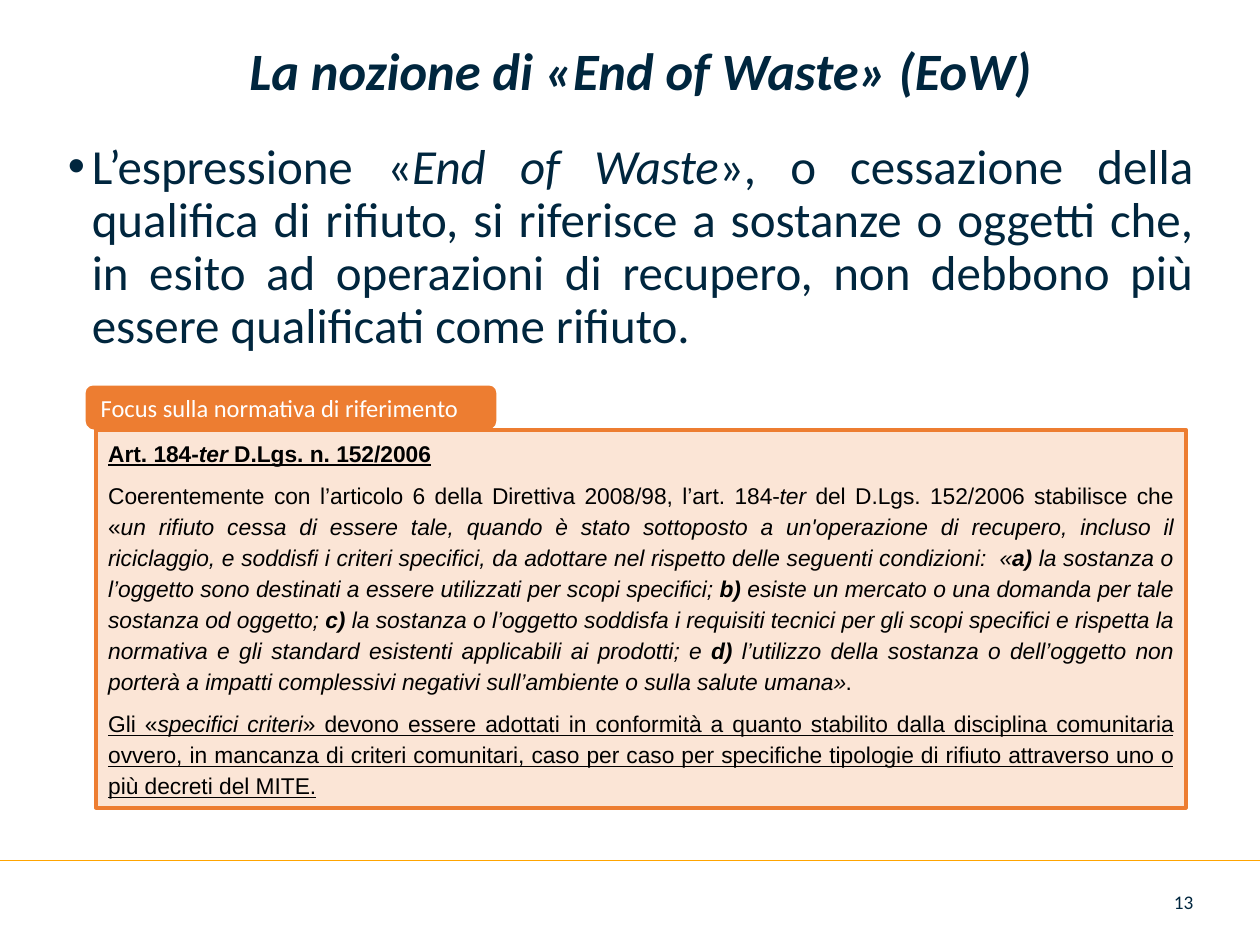
from lxml.etree import SubElement
from pptx import Presentation
from pptx.dml.color import RGBColor
from pptx.enum.shapes import MSO_CONNECTOR, MSO_SHAPE
from pptx.enum.text import MSO_ANCHOR, PP_ALIGN
from pptx.oxml.ns import qn
from pptx.util import Inches, Pt

NAVY, ORANGE, PEACH, AMBER = "00263E", "ED7D31", "FBE5D6", "FFA400"
WHITE, BLACK = "FFFFFF", "000000"

TITLE = "La nozione di «End of Waste» (EoW)"

# Each span is (text, styles): b = bold, i = italic, u = underlined
DEFINITION = [
    ("L’espressione «", ""),
    ("End of Waste", "i"),
    ("», o cessazione della qualifica di rifiuto, si riferisce a sostanze o oggetti che, "
     "in esito ad operazioni di recupero, non debbono più essere qualificati come rifiuto.", ""),
]
LAW_TEXT = [
    [("Art. 184-", "bu"), ("ter", "biu"), (" D.Lgs. n. 152/2006", "bu")],
    [
        ("Coerentemente con l’articolo 6 della Direttiva 2008/98, l’art. 184-", ""),
        ("ter", "i"),
        (" del D.Lgs. 152/2006 stabilisce che «", ""),
        ("un rifiuto cessa di essere tale, quando è stato sottoposto a un'operazione di "
         "recupero, incluso il riciclaggio, e soddisfi i criteri specifici, da adottare nel "
         "rispetto delle seguenti condizioni:  «", "i"),
        ("a)", "bi"),
        (" la sostanza o l’oggetto sono destinati a essere utilizzati per scopi specifici; ", "i"),
        ("b)", "bi"),
        (" esiste un mercato o una domanda per tale sostanza od oggetto; ", "i"),
        ("c)", "bi"),
        (" la sostanza o l’oggetto soddisfa i requisiti tecnici per gli scopi specifici e "
         "rispetta la normativa e gli standard esistenti applicabili ai prodotti; e ", "i"),
        ("d)", "bi"),
        (" l’utilizzo della sostanza o dell’oggetto non porterà a impatti complessivi "
         "negativi sull’ambiente o sulla salute umana»", "i"),
        (".", ""),
    ],
    [
        ("Gli «", "u"),
        ("specifici criteri", "iu"),
        ("» devono essere adottati in conformità a quanto stabilito dalla disciplina "
         "comunitaria ovvero, in mancanza di criteri comunitari, caso per caso per specifiche "
         "tipologie di rifiuto attraverso uno o più decreti del MITE.", "u"),
    ],
]


def color(value):
    return RGBColor.from_string(value)


def inches(box):
    return [Inches(length) for length in box]


def write_spans(para, spans, font_name, size, ink, align):
    para.alignment = align
    for text, styles in spans:
        span = para.add_run()
        span.text = text
        font = span.font
        font.name, font.size = font_name, Pt(size)
        font.color.rgb = color(ink)
        font.bold, font.italic, font.underline = ("b" in styles, "i" in styles, "u" in styles)


def add_panel(page, kind, box, fill, line=None):
    panel = page.shapes.add_shape(kind, *inches(box))
    panel.shadow.inherit = False
    panel.fill.solid()
    panel.fill.fore_color.rgb = color(fill)
    if line:
        panel.line.color.rgb = color(line)
        panel.line.width = Pt(2.25)
    else:
        panel.line.fill.background()
    panel.text_frame.word_wrap = True
    return panel


def place_title(page, box):
    title = page.shapes.title
    title.left, title.top, title.width, title.height = inches(box)
    frame = title.text_frame
    frame.margin_left = frame.margin_right = frame.margin_top = frame.margin_bottom = 0
    frame.vertical_anchor = MSO_ANCHOR.MIDDLE
    para = frame.paragraphs[0]
    para.line_spacing = 0.9
    write_spans(para, [(TITLE, "bi")], "Calibri", 30, NAVY, PP_ALIGN.CENTER)


def add_definition(page, box):
    frame = page.shapes.add_textbox(*inches(box)).text_frame
    frame.word_wrap = True
    para = frame.paragraphs[0]
    properties = para._p.get_or_add_pPr()
    indent = Inches(0.19)
    properties.set("marL", str(indent))
    properties.set("indent", str(-indent))
    SubElement(properties, qn("a:buFont"), typeface="Arial")
    SubElement(properties, qn("a:buChar"), char="•")
    para.line_spacing = 0.9
    write_spans(para, DEFINITION, "Calibri", 28, NAVY, PP_ALIGN.JUSTIFY)


def add_law_focus(page, box):
    """Bordered panel with the law, and its heading tab standing on the top edge."""
    left, top, width, height = box
    panel = add_panel(page, MSO_SHAPE.RECTANGLE, box, PEACH, ORANGE)
    frame = panel.text_frame
    frame.vertical_anchor = MSO_ANCHOR.TOP
    for index, spans in enumerate(LAW_TEXT):
        para = frame.add_paragraph() if index else frame.paragraphs[0]
        para.line_spacing = 1.14
        para.space_before = Pt(3 if index else 0)
        para.space_after = Pt(3)
        write_spans(para, spans, "Arial", 13, BLACK, PP_ALIGN.JUSTIFY)

    tab_height = 0.35
    tab = add_panel(page, MSO_SHAPE.ROUND_2_SAME_RECTANGLE,
                    (left - 0.08, top - tab_height, 3.26, tab_height), ORANGE)
    tab.adjustments[0], tab.adjustments[1] = 0.17, 0.2
    tab.text_frame.vertical_anchor = MSO_ANCHOR.MIDDLE
    write_spans(tab.text_frame.paragraphs[0], [("Focus sulla normativa di riferimento", "")],
                "Calibri", 14, WHITE, PP_ALIGN.LEFT)


def add_footer(page, rule_top, number_box):
    rule = page.shapes.add_connector(MSO_CONNECTOR.STRAIGHT, *inches((0, rule_top, 10, rule_top)))
    rule.line.color.rgb = color(AMBER)
    rule.line.width = Pt(0.5)
    SubElement(rule._element.spPr, qn("a:effectLst"))
    frame = page.shapes.add_textbox(*inches(number_box)).text_frame
    frame.word_wrap = True
    frame.vertical_anchor = MSO_ANCHOR.MIDDLE
    write_spans(frame.paragraphs[0], [("13", "")], "Calibri", 11, NAVY, PP_ALIGN.RIGHT)


def main():
    deck = Presentation()
    deck.slide_width, deck.slide_height = Inches(10), Inches(7.5)
    page = deck.slides.add_slide(deck.slide_layouts[5])
    place_title(page, (0.52, 0.09, 9.13, 0.98))
    add_definition(page, (0.44, 1.08, 9.13, 6.12))
    add_footer(page, 6.83, (9.11, 6.96, 0.46, 0.4))
    add_law_focus(page, (0.76, 3.41, 8.65, 3))
    deck.save("out.pptx")


if __name__ == "__main__":
    main()
